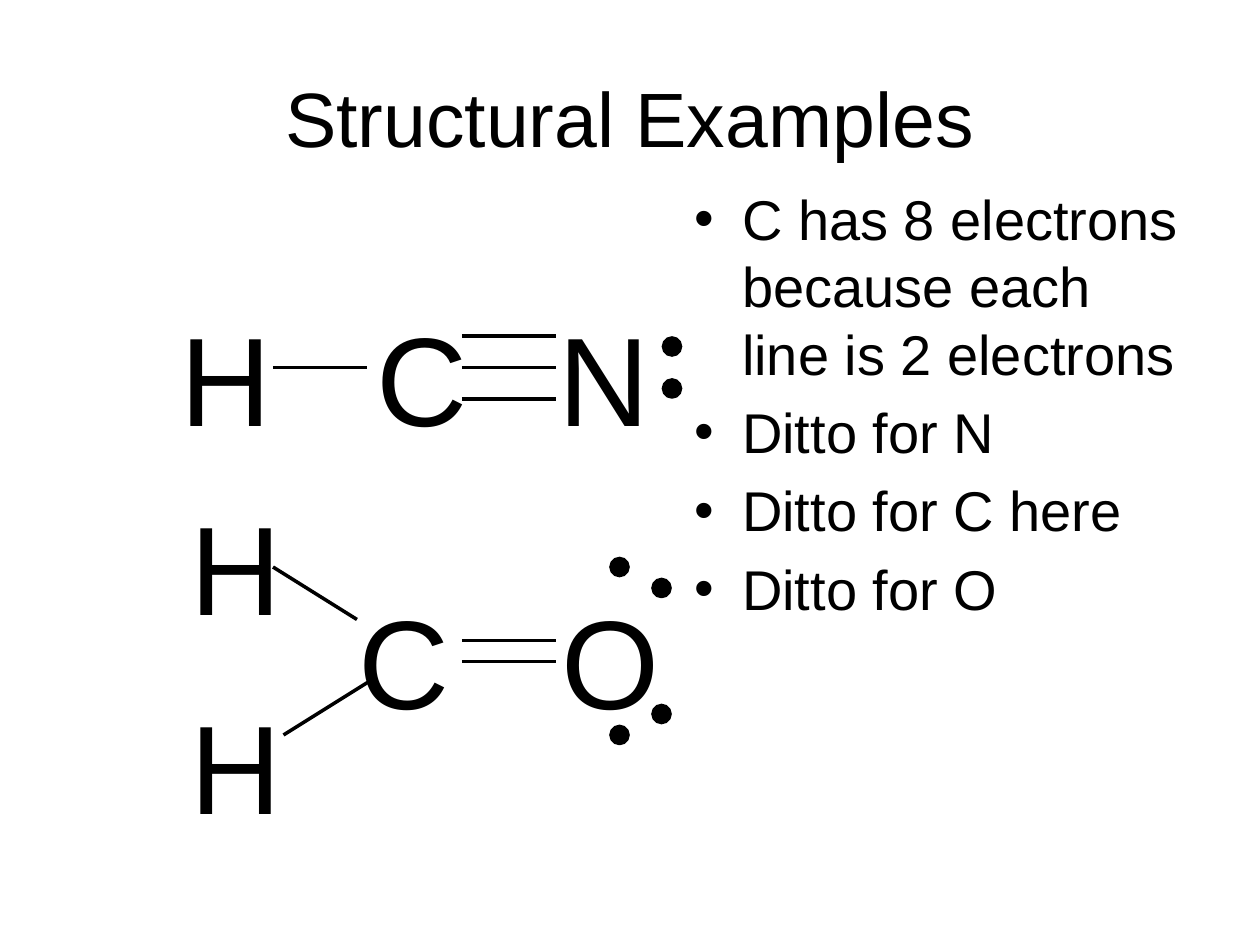
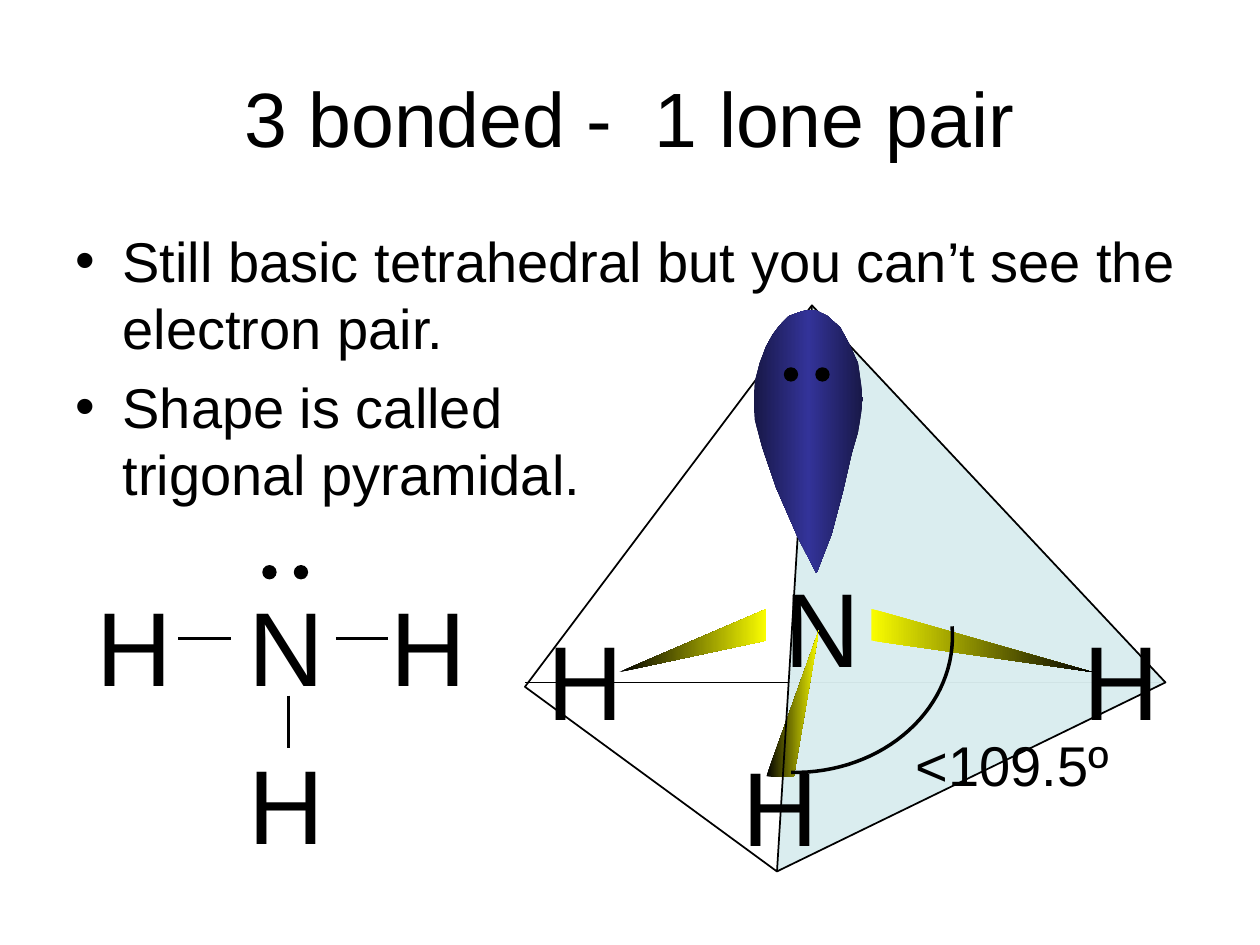
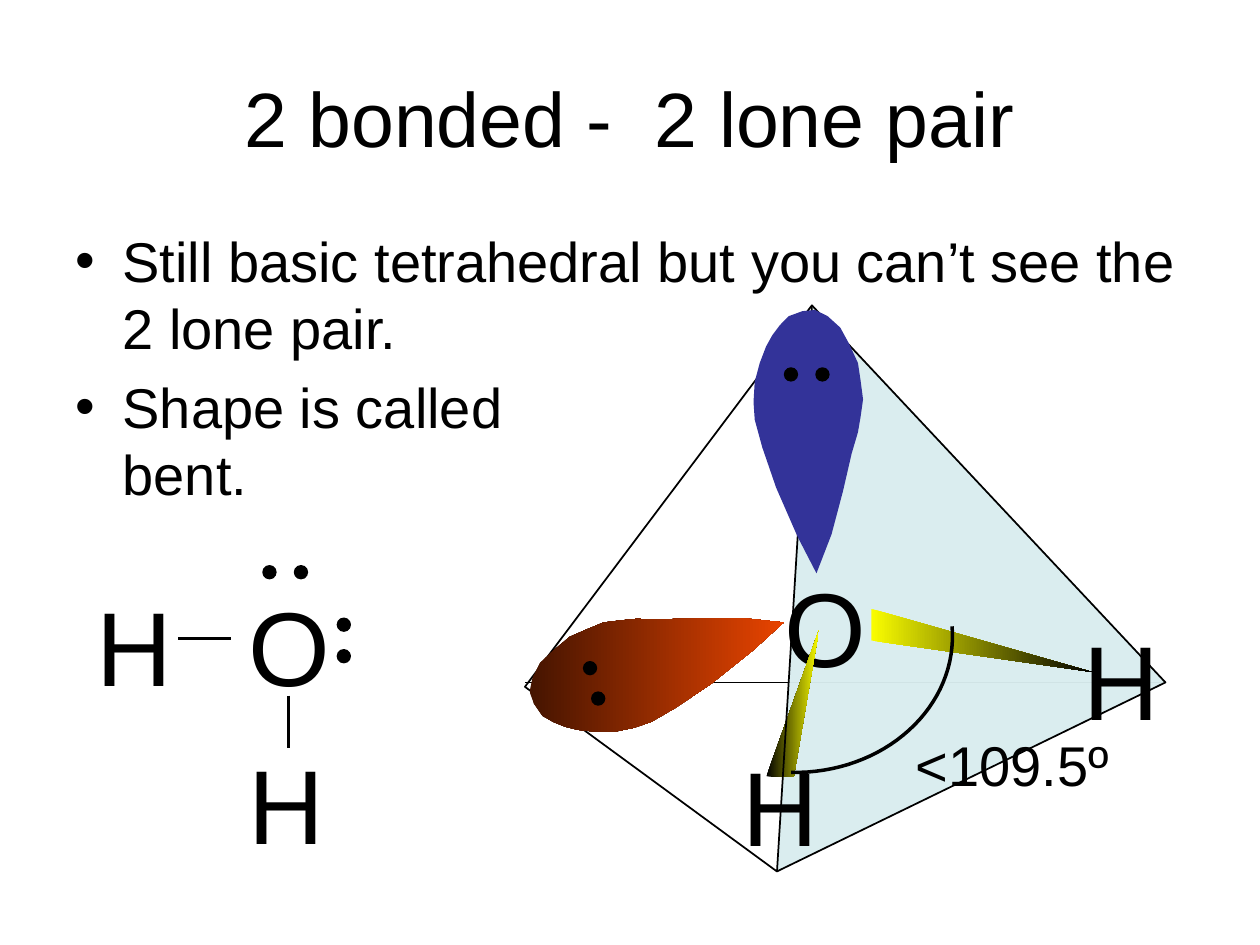
from dataclasses import dataclass
from math import cos, radians, sin

from lxml.etree import SubElement
from pptx import Presentation
from pptx.dml.color import RGBColor
from pptx.enum.shapes import MSO_CONNECTOR as Connector, MSO_SHAPE as Preset
from pptx.enum.text import MSO_ANCHOR as Anchor, PP_ALIGN as Align
from pptx.oxml.ns import qn
from pptx.util import Pt


@dataclass(frozen=True)
class Theme:
    font: str = "Arial"
    ink: str = "000000"
    face: str = "D9EDEF"
    bond: str = "FAFD00"
    lobe: str = "333399"
    lobe_shade: str = "181847"
    side_lobe: str = "E84400"
    side_lobe_shade: str = "451400"
    title_size: float = 44
    body_size: float = 32
    atom_size: float = 60
    big_atom_size: float = 72
    thin: float = 1
    thick: float = 2


THEME = Theme()

# Tetrahedron corners
APEX, RIGHT, FRONT, LEFT = (464, 174.5), (666, 390), (444, 498), (300, 392.5)

# Wedges that stand for bonds
LEFT_WEDGE = [(438, 348), (354, 384), (438, 366)]
RIGHT_WEDGE = [(498, 348), (624, 384), (498, 366)]
FRONT_WEDGE = [(438, 443.5), (453.6, 444), (468, 360)]

# Lone pair lobe with its two dots; the side lobe is the same one turned
LOBE_TIP, SIDE_TIP, SIDE_TURN = (466.6, 327.6), (447.8, 355.7), -105
LOBE_DOTS = [(452, 214), (470, 214)]
LOBE = [
    (443.5, 278.6), (435.6, 255.6), (431.3, 239.8), (430.6, 229.7), (431.3, 218.2),
    (434.2, 207.4), (437.8, 198), (441.4, 191.5), (445.7, 185.8), (450.7, 180.7),
    (458.6, 177.8), (465.8, 177.1), (473, 180.7), (480.2, 187.2), (485.3, 196.6),
    (490.3, 207.4), (491.8, 217.4), (493.2, 228.2), (491.8, 238.3), (490.3, 247),
    (486.7, 259.2), (481.7, 280.8), (475.2, 305.3), LOBE_TIP, (455.8, 306.7),
]


def turn_to_side(points):
    """Turn points about the lobe tip and move the tip to the side."""
    c, s = cos(radians(SIDE_TURN)), sin(radians(SIDE_TURN))
    offsets = [(x - LOBE_TIP[0], y - LOBE_TIP[1]) for x, y in points]
    return [(SIDE_TIP[0] + c * x - s * y, SIDE_TIP[1] + s * x + c * y) for x, y in offsets]


class Deck:
    """Holds the theme and the slide being drawn."""

    def __init__(self, theme):
        self.theme = theme
        self.presentation = Presentation()
        self.presentation.slide_width = Pt(720)
        self.presentation.slide_height = Pt(540)
        self.slide = None

    def add_slide(self, title):
        layout = self.presentation.slide_layouts[6]
        self.slide = self.presentation.slides.add_slide(layout)
        frame = self.text(title, 36, 21.6, 648, 90, self.theme.title_size)
        frame.vertical_anchor = Anchor.MIDDLE
        frame.paragraphs[0].alignment = Align.CENTER

    # Text
    def text(self, text, left, top, width, height, size):
        box = self.slide.shapes.add_textbox(Pt(left), Pt(top), Pt(width), Pt(height))
        frame = box.text_frame
        frame.word_wrap = True
        frame.text = text
        for paragraph in frame.paragraphs:
            for run in paragraph.runs:
                run.font.name = self.theme.font
                run.font.size = Pt(size)
                run.font.color.rgb = RGBColor.from_string(self.theme.ink)
        return frame

    def bullets(self, items, left, top, width, height):
        size = self.theme.body_size
        frame = self.text("\n".join(items), left, top, width, height, size)
        for paragraph in frame.paragraphs:
            paragraph.space_before = Pt(size * 0.2)
            properties = paragraph._p.get_or_add_pPr()
            properties.set("marL", str(Pt(27)))
            properties.set("indent", str(-Pt(27)))
            SubElement(properties, qn("a:buFont"), typeface=self.theme.font)
            SubElement(properties, qn("a:buChar"), char="•")

    def atom_row(self, atoms, left, top, stops):
        frame = self.text("\t".join(atoms), left, top, 384, 93.6, self.theme.big_atom_size)
        tabs = SubElement(frame.paragraphs[0]._p.get_or_add_pPr(), qn("a:tabLst"))
        for stop in stops:
            SubElement(tabs, qn("a:tab"), pos=str(Pt(stop)), algn="l")

    def atom(self, symbol, left, top):
        self.text(symbol, left, top, 66, 79, self.theme.atom_size)

    # Lines and dots
    def line(self, start, end, width=None):
        ends = [Pt(value) for value in (*start, *end)]
        connector = self.slide.shapes.add_connector(Connector.STRAIGHT, *ends)
        connector.line.color.rgb = RGBColor.from_string(self.theme.ink)
        connector.line.width = Pt(width or self.theme.thick)
        SubElement(connector._element.spPr, qn("a:effectLst"))

    def dots(self, centers, size=7.2):
        for x, y in centers:
            dot = self.slide.shapes.add_shape(
                Preset.OVAL, Pt(x - size / 2), Pt(y - size / 2), Pt(size), Pt(size))
            self.paint(dot, [self.theme.ink], self.theme.thin)

    # Outlines
    def outline(self, points, colors=(), line_width=0, close=True):
        corners = [(Pt(x), Pt(y)) for x, y in points]
        builder = self.slide.shapes.build_freeform(*corners[0], scale=1.0)
        builder.add_line_segments(corners[1:], close=close)
        shape = builder.convert_to_shape()
        self.paint(shape, colors, line_width)
        return shape

    def paint(self, shape, colors, line_width):
        """No colour leaves the shape empty, several make a left-to-right gradient."""
        shape.shadow.inherit = False
        if len(colors) == 1:
            shape.fill.solid()
            shape.fill.fore_color.rgb = RGBColor.from_string(colors[0])
        else:
            shape.fill.background()
        if len(colors) > 1:
            self.gradient(shape, colors)
        if line_width:
            shape.line.color.rgb = RGBColor.from_string(self.theme.ink)
            shape.line.width = Pt(line_width)
        else:
            shape.line.fill.background()

    def gradient(self, shape, colors):
        properties = shape._element.spPr
        empty = properties.find(qn("a:noFill"))
        gradient = SubElement(properties, qn("a:gradFill"), rotWithShape="1")
        stops = SubElement(gradient, qn("a:gsLst"))
        for index, color in enumerate(colors):
            position = index * 100000 // (len(colors) - 1)
            stop = SubElement(stops, qn("a:gs"), pos=str(position))
            SubElement(stop, qn("a:srgbClr"), val=color)
        SubElement(gradient, qn("a:lin"), ang="0", scaled="1")
        properties.replace(empty, gradient)

    def arc(self, center, radii, first, last, steps=32):
        angles = [radians(first + (last - first) * i / steps) for i in range(steps + 1)]
        points = [(center[0] + radii[0] * cos(a), center[1] + radii[1] * sin(a))
                  for a in angles]
        self.outline(points, line_width=self.theme.thick, close=False)


def draw_flat_structure(deck, center):
    """Central atom with dots above and an H to the left and below."""
    deck.atom(center, 135, 329)
    deck.atom("H", 48, 329)
    deck.atom("H", 135, 419)
    deck.line((102, 365), (132, 365))
    deck.line((165, 397.5), (165, 427.5))
    deck.dots([(154, 327), (172, 327)])


def draw_tetrahedron(deck, center, lobe_colors, left_bonded):
    theme = deck.theme
    # Base and shaded face
    deck.line((300, 390), RIGHT, theme.thin)
    face = deck.outline([APEX, RIGHT, FRONT], [theme.face])
    color = face._element.spPr.find(qn("a:solidFill"))[0]
    SubElement(color, qn("a:alpha"), val="96000")

    # Atoms and bonds
    deck.atom(center, 441, 318)
    deck.atom("H", 612, 348)
    deck.atom("H", 417, 420)
    if left_bonded:
        deck.atom("H", 306, 348)
        deck.outline(LEFT_WEDGE, [theme.ink, theme.bond])
    deck.outline(RIGHT_WEDGE, [theme.bond, theme.ink])
    deck.outline(FRONT_WEDGE, [theme.ink, theme.bond])

    # Bond angle
    deck.arc((454.3, 363.6), (90, 77.8), -4.2, 91.4)
    deck.text("<109.5º", 516, 414, 126, 45, theme.body_size)

    # Edges and lone pairs
    deck.outline([LEFT, APEX, RIGHT, FRONT], line_width=theme.thin)
    if not left_bonded:
        deck.outline(turn_to_side(LOBE), [theme.side_lobe_shade, theme.side_lobe])
        deck.dots(turn_to_side(LOBE_DOTS))
    deck.line(APEX, FRONT, theme.thin)
    deck.outline(LOBE, lobe_colors)
    deck.dots(LOBE_DOTS)


def add_structures(deck):
    deck.add_slide("Structural Examples")
    # Upper structure
    deck.atom_row(["H", "C", "N"], 96, 168, [112, 216])
    deck.line((156, 210), (210, 210))
    for y in (192, 210, 228):
        deck.line((264, y), (318, y))
    # Lower structure
    deck.atom_row(["", "C", "O"], 78, 330, [120, 236])
    for top in (276, 390):
        deck.text("H", 102, top, 84, 93.6, deck.theme.big_atom_size)
    for y in (366, 378):
        deck.line((264, y), (318, y))
    deck.line((156, 324), (204, 354))
    deck.line((162, 420), (210, 390))
    # Electron dots
    deck.dots([(384, 198), (384, 222), (354, 324), (378, 336), (354, 420), (378, 408)], 10.8)
    deck.bullets(["C has 8 electrons because each line is 2 electrons",
                  "Ditto for N", "Ditto for C here", "Ditto for O"], 390, 102, 294, 390)


def add_lone_pair_slide(deck, title, hidden, shape_name, center, lobe_colors, left_bonded):
    deck.add_slide(title)
    deck.bullets([f"Still basic tetrahedral but you can’t see the {hidden}.",
                  f"Shape is called\v{shape_name}."], 36, 126, 648, 356)
    draw_flat_structure(deck, center)
    if left_bonded:
        deck.atom("H", 216, 329)
        deck.line((192, 365), (222, 365))
    else:
        deck.dots([(196.5, 357), (196.5, 375)])
    draw_tetrahedron(deck, center, lobe_colors, left_bonded)


def main():
    deck = Deck(THEME)
    add_structures(deck)
    add_lone_pair_slide(deck, "3 bonded -  1 lone pair", "electron pair",
                        "trigonal pyramidal", "N",
                        [THEME.lobe_shade, THEME.lobe, THEME.lobe_shade], True)
    add_lone_pair_slide(deck, "2 bonded -  2 lone pair", "2 lone pair",
                        "bent", "O", [THEME.lobe], False)
    deck.presentation.save("out.pptx")


if __name__ == "__main__":
    main()
